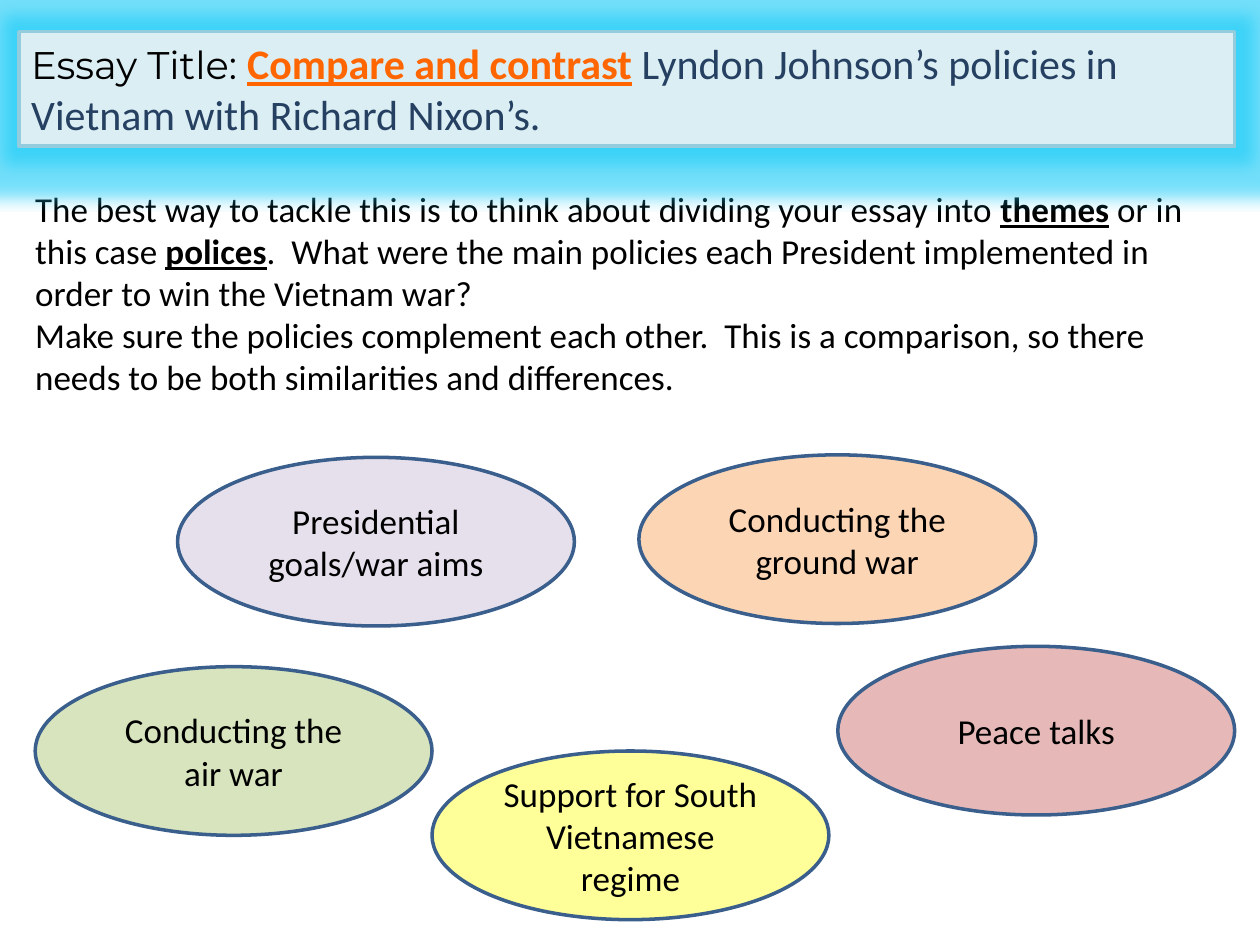
from typing import NamedTuple

from lxml.etree import SubElement as Sub
from pptx import Presentation
from pptx.dml.color import RGBColor
from pptx.enum.shapes import MSO_SHAPE as Kind
from pptx.enum.text import MSO_ANCHOR as Anchor, PP_ALIGN as Align
from pptx.oxml.ns import qn
from pptx.util import Cm, Pt


class Run(NamedTuple):
    text: str
    strong: bool = False
    hue: str = ""
    size: float = 0
    face: str = ""


class Theme(NamedTuple):
    text: str
    left: float
    top: float
    fill: str


FACE = "Calibri"
INK = "000000"
EDGE = "3A5F8C"
WIDE, HIGH = 8, 3.4

TITLE = [
    Run("Essay Title: ", hue=INK, size=22, face="Montserrat"),
    Run("Compare and contrast", True, "FF6600"),
    Run(" Lyndon Johnson’s policies in Vietnam with Richard Nixon’s."),
]
BODY = [
    [
        Run("The best way to tackle this is to think about dividing your essay into "),
        Run("themes", True),
        Run(" or in this case "),
        Run("polices", True),
        Run(".  What were the main policies each President implemented "
            "in order to win the Vietnam war?"),
    ],
    [Run("Make sure the policies complement each other.  This is a comparison, "
         "so there needs to be both similarities and differences.")],
]
THEMES = [
    Theme("Presidential goals/war aims", 3.58, 9.22, "E6E0EC"),
    Theme("Conducting the ground war", 12.88, 9.17, "FCD5B5"),
    Theme("Conducting the air war", 0.71, 13.44, "D7E4BD"),
    Theme("Support for South Vietnamese regime", 8.71, 15.14, "FFFF99"),
    Theme("Peace talks", 16.89, 13.03, "E6B9B8"),
]


def paint(item, hue: str) -> None:
    item.rgb = RGBColor.from_string(hue)


def write(para, runs: list[Run], size: float, hue: str = INK,
          align: Align = Align.LEFT) -> None:
    para.alignment = align
    para.font.name = FACE
    para.font.size = Pt(size)
    paint(para.font.color, hue)
    for part in runs:
        run = para.add_run()
        run.text = part.text
        font = run.font
        if part.strong:
            font.bold = font.underline = True
        if part.hue:
            paint(font.color, part.hue)
        if part.size:
            font.size = Pt(part.size)
        if part.face:
            font.name = part.face


def draw(slide, kind: Kind, box: tuple[float, ...], fill: str, edge: str,
         anchor: Anchor):
    shape = slide.shapes.add_shape(kind, *map(Cm, box))
    shape.shadow.inherit = False
    shape.fill.solid()
    paint(shape.fill.fore_color, fill)
    paint(shape.line.color, edge)
    shape.line.width = Pt(2)
    shape.text_frame.word_wrap = True
    shape.text_frame.vertical_anchor = anchor
    return shape


def glow(shape, hue: str, reach: float, alpha: int) -> None:
    effect = shape.element.spPr.find(qn("a:effectLst"))
    halo = Sub(effect, qn("a:glow"), rad=str(Cm(reach)))
    color = Sub(halo, qn("a:srgbClr"), val=hue)
    Sub(color, qn("a:alpha"), val=str(alpha * 1000))


def main() -> None:
    deck = Presentation()
    deck.slide_width, deck.slide_height = Cm(25.4), Cm(19.05)
    slide = deck.slides.add_slide(deck.slide_layouts[6])

    body = slide.shapes.add_textbox(*map(Cm, (0.46, 3.66, 24.43, 5.38))).text_frame
    body.word_wrap = True
    for i, runs in enumerate(BODY):
        write(body.add_paragraph() if i else body.paragraphs[0], runs, 20)

    title = draw(slide, Kind.RECTANGLE, (0.38, 0.64, 24.51, 2.31),
                 "DBEEF4", "93CDDD", Anchor.TOP)
    glow(title, "18CBF7", 0.64, 60)
    write(title.text_frame.paragraphs[0], TITLE, 24, "254061")

    for theme in THEMES:
        oval = draw(slide, Kind.OVAL, (theme.left, theme.top, WIDE, HIGH),
                    theme.fill, EDGE, Anchor.MIDDLE)
        write(oval.text_frame.paragraphs[0], [Run(theme.text)], 20,
              align=Align.CENTER)

    deck.save("out.pptx")


if __name__ == "__main__":
    main()
